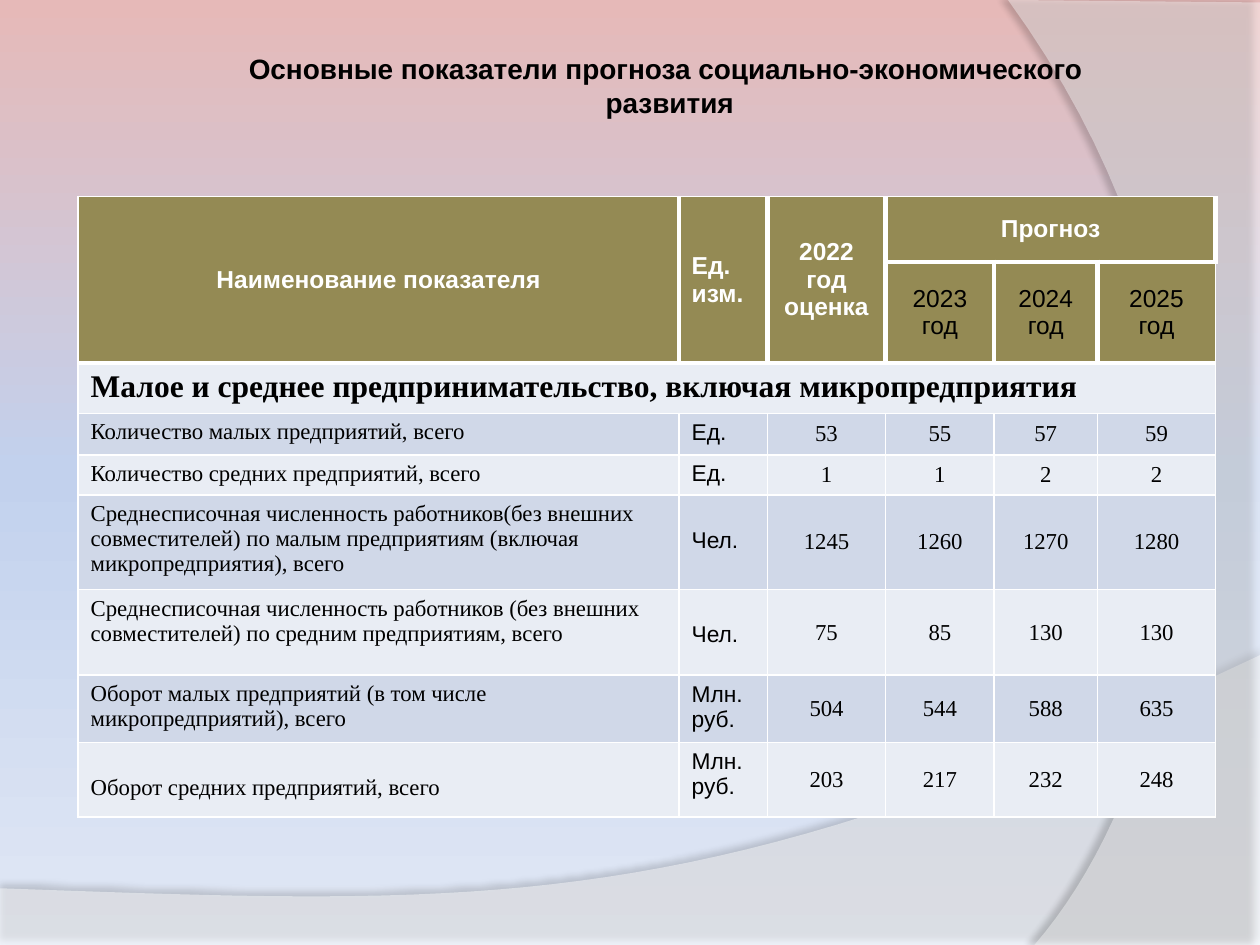
import pptx
import pptx.dml.color
import pptx.enum.text
import pptx.oxml
import pptx.oxml.ns
import pptx.util

Inches = pptx.util.Inches
Pt = pptx.util.Pt
RGB = pptx.dml.color.RGBColor.from_string
ALIGN = pptx.enum.text.PP_ALIGN
MIDDLE = pptx.enum.text.MSO_ANCHOR.MIDDLE
NS = pptx.oxml.ns.nsdecls("a", "p")

THEME = {
    "sans": "Arial", "serif": "Times New Roman",
    "title": 16, "header": 14, "section": 18, "body": 13,
    "text": "000000", "white": "FFFFFF", "olive": "948A54",
    "light": "E9EDF4", "band": "D0D8E8",
    "sky": [(0, "E6B9B8"), (50, "C2D1ED"), (100, "E1E8F5")],
}


def write(tf, lines, font, size, color="text", bold=False, align=ALIGN.LEFT):
    tf.word_wrap = True
    for i, line in enumerate(lines):
        p = tf.paragraphs[0] if i == 0 else tf.add_paragraph()
        p.text = line
        p.alignment = align
        p.font.name = THEME[font]
        p.font.size = Pt(THEME[size])
        p.font.bold = bold
        p.font.color.rgb = RGB(THEME[color])


def style_cell(cell, fill, left=1, right=1, top=1, bottom=1):
    tcPr = cell._tc.get_or_add_tcPr()
    for side, width in zip("LRTB", (left, right, top, bottom)):
        tcPr.append(pptx.oxml.parse_xml(
            f'<a:ln{side} {NS} w="{Pt(width)}"><a:solidFill>'
            f'<a:srgbClr val="{THEME["white"]}"/></a:solidFill></a:ln{side}>'))
    cell.fill.solid()
    cell.fill.fore_color.rgb = RGB(THEME[fill])


prs = pptx.Presentation()
prs.slide_width = Inches(10)
prs.slide_height = Inches(7.5)
s = prs.slides.add_slide(prs.slide_layouts[6])

stops = "".join(f'<a:gs pos="{pos * 1000}"><a:srgbClr val="{color}"/></a:gs>'
                for pos, color in THEME["sky"])
s.element.cSld.insert(0, pptx.oxml.parse_xml(
    f'<p:bg {NS}><p:bgPr><a:gradFill rotWithShape="1"><a:gsLst>{stops}</a:gsLst>'
    '<a:lin ang="5400000" scaled="0"/></a:gradFill><a:effectLst/></p:bgPr></p:bg>'))

waves = [
    ([(0, 7.05), (0, 7.5), (10, 7.5)],
     [(10, 5.2), (5.59, 7.29), (3.91, 7.19), (0, 7.05)], 45, 35, 3.5, 270),
    ([(10, 0.02), (10, 7.5)],
     [(8.21, 7.5), (9.35, 6.19), (10.18, 3), (8, 0)], 40, 45, 4, 180),
]
STEPS = 40
for edge, curve, opacity, shade, distance, angle in waves:
    points = list(edge)
    for i in range(STEPS + 1):
        t = i / STEPS
        weights = ((1 - t) ** 3, 3 * t * (1 - t) ** 2, 3 * t * t * (1 - t), t ** 3)
        points.append(tuple(sum(w * c[axis] for w, c in zip(weights, curve))
                            for axis in (0, 1)))
    points = [(Inches(x), Inches(y)) for x, y in points]
    builder = s.shapes.build_freeform(*points[0])
    builder.add_line_segments(points[1:], close=True)
    sp = builder.convert_to_shape()
    sp.line.fill.background()
    sp.fill.solid()
    sp.fill.fore_color.rgb = RGB(THEME["white"])
    color = sp.element.spPr.find(".//" + pptx.oxml.ns.qn("a:srgbClr"))
    color.append(pptx.oxml.parse_xml(f'<a:alpha {NS} val="{opacity * 1000}"/>'))
    sp.element.spPr.append(pptx.oxml.parse_xml(
        f'<a:effectLst {NS}><a:outerShdw blurRad="{Pt(4)}" dist="{Pt(distance)}" '
        f'dir="{angle * 60000}" algn="tl" rotWithShape="0">'
        f'<a:srgbClr val="{THEME["text"]}"><a:alpha val="{shade * 1000}"/></a:srgbClr>'
        '</a:outerShdw></a:effectLst>'))

title = s.shapes.add_textbox(Inches(0.67), Inches(0.36), Inches(9.29), Inches(0.64))
write(title.text_frame,
      ["Основные показатели прогноза социально-экономического ", "развития"],
      "sans", "title", bold=True, align=ALIGN.CENTER)

col_widths = [4.77, 0.7, 0.94, 0.86, 0.82, 0.94]
row_heights = [0.52, 0.54, 0.36, 0.33, 0.29, 0.68, 0.68, 0.48, 0.59]
table = s.shapes.add_table(len(row_heights), len(col_widths), Inches(0.62), Inches(1.56),
                           Inches(sum(col_widths)), Inches(sum(row_heights))).table
table.first_row = False
table.horz_banding = False
for col, width in zip(table.columns, col_widths):
    col.width = Inches(width)
for row, height in zip(table.rows, row_heights):
    row.height = Inches(height)

last = len(col_widths) - 1
for r in range(2):
    for c in range(last + 1):
        style_cell(table.cell(r, c), "olive", left=3 if c else 1,
                   right=3 if c < last else 1, top=3 if r else 1, bottom=3)
for c in range(3):
    table.cell(0, c).merge(table.cell(1, c))
table.cell(0, 3).merge(table.cell(0, last))

headers = [["Наименование показателя"], ["Ед.", "изм."], ["2022 год оценка"], ["Прогноз"]]
for c, lines in enumerate(headers):
    cell = table.cell(0, c)
    cell.vertical_anchor = MIDDLE
    write(cell.text_frame, lines, "sans", "header", "white", True,
          ALIGN.LEFT if c == 1 else ALIGN.CENTER)
for c, year in enumerate((2023, 2024, 2025), 3):
    cell = table.cell(1, c)
    cell.vertical_anchor = MIDDLE
    write(cell.text_frame, [f"{year} год"], "sans", "header", align=ALIGN.CENTER)

for c in range(last + 1):
    style_cell(table.cell(2, c), "light", top=3)
table.cell(2, 0).merge(table.cell(2, last))
write(table.cell(2, 0).text_frame,
      ["Малое и среднее предпринимательство, включая микропредприятия"],
      "serif", "section", bold=True)

indicators = [
    ("Количество малых предприятий, всего", ["Ед."], (53, 55, 57, 59)),
    ("Количество средних предприятий, всего", ["Ед."], (1, 1, 2, 2)),
    ("Среднесписочная численность работников(без внешних совместителей) по малым "
     "предприятиям (включая микропредприятия), всего", ["Чел."], (1245, 1260, 1270, 1280)),
    ("Среднесписочная численность работников (без внешних совместителей) по средним "
     "предприятиям, всего", ["Чел."], (75, 85, 130, 130)),
    ("Оборот малых предприятий (в том числе микропредприятий), всего",
     ["Млн.", "руб."], (504, 544, 588, 635)),
    ("Оборот средних предприятий, всего", ["Млн.", "руб."], (203, 217, 232, 248)),
]
lowered = {(5, 1), (6, 1), (8, 0)}
for r, (name, unit, values) in enumerate(indicators, 3):
    texts = [[name], unit] + [[str(value)] for value in values]
    for c, lines in enumerate(texts):
        cell = table.cell(r, c)
        style_cell(cell, "band" if r % 2 else "light")
        if (r, c) in lowered:
            cell.margin_top = Inches(0.26)
        if c > 1:
            cell.vertical_anchor = MIDDLE
        write(cell.text_frame, lines, "sans" if c == 1 else "serif", "body",
              align=ALIGN.CENTER if c > 1 else ALIGN.LEFT)

prs.save("out.pptx")
